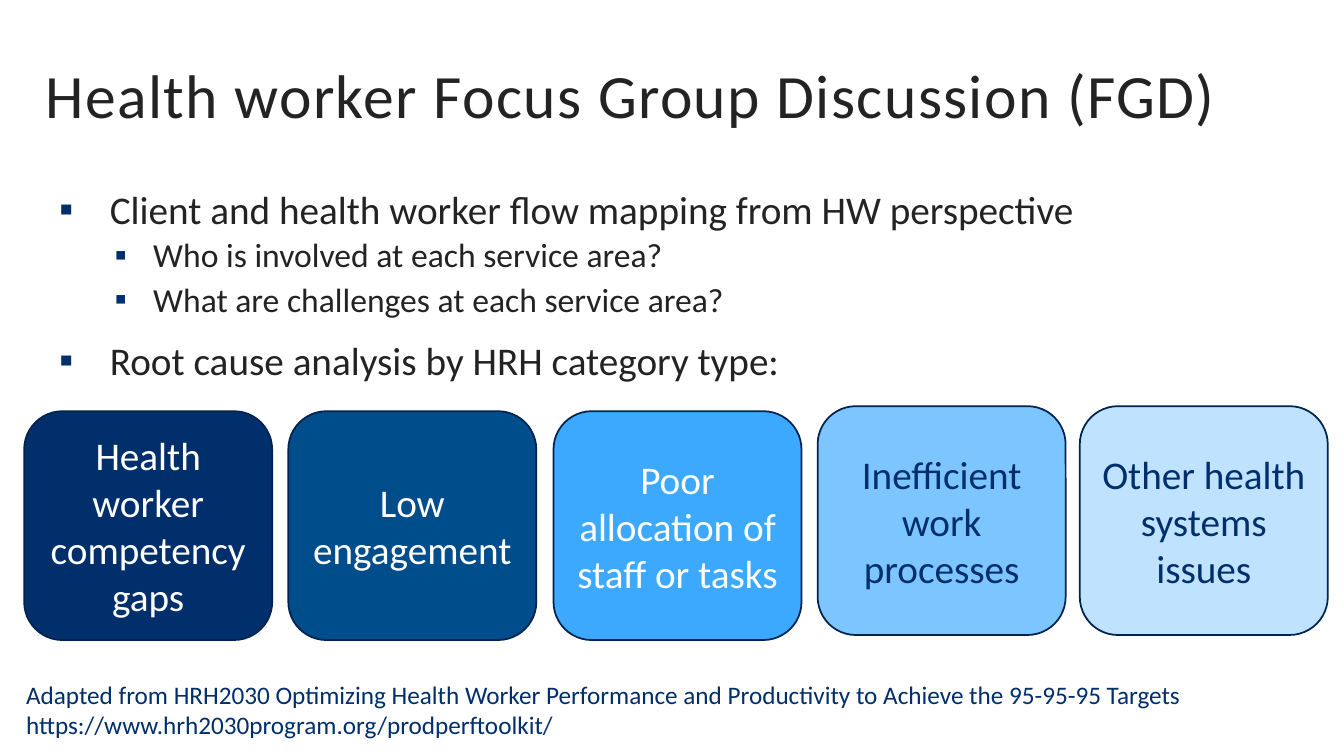
import pptx
import pptx.util
import pptx.dml.color
import pptx.enum.shapes
import pptx.enum.text
import pptx.oxml
import pptx.oxml.ns

RGB = pptx.dml.color.RGBColor
ALIGN = pptx.enum.text.PP_ALIGN
ANCHOR = pptx.enum.text.MSO_ANCHOR
INK = RGB(0x23, 0x23, 0x23)
NAVY = RGB(0x00, 0x2F, 0x6C)
EDGE = RGB(0x00, 0x23, 0x50)
BLUE = RGB(0x00, 0x4D, 0x8B)
SKY = RGB(0x3C, 0xA9, 0xFF)
LIGHT = RGB(0x7D, 0xC5, 0xFF)
PALE = RGB(0xBE, 0xE2, 0xFF)
WHITE = RGB(0xFF, 0xFF, 0xFF)

TITLE = "Health worker Focus Group Discussion (FGD)"
POINTS = [
    (0, "Client and health worker flow mapping from HW perspective"),
    (1, "Who is involved at each service area?"),
    (1, "What are challenges at each service area?"),
    (0, "Root cause analysis by HRH category type:"),
]
# level: (size, left px, hang px, points before, points after)
LEVELS = [(28, 50, 50, 12, 2), (24, 93, 38, 2, 4)]
# left px, top px, fill, text colour, text
CAUSES = [
    (24, 408, NAVY, WHITE, "Health worker competency gaps"),
    (286, 408, BLUE, WHITE, "Low engagement"),
    (549, 408, SKY, WHITE, "Poor allocation of staff or tasks"),
    (811, 403, LIGHT, NAVY, "Inefficient work processes"),
    (1071, 403, PALE, NAVY, "Other health systems issues"),
]
CAUSE_W, CAUSE_H = 246, 227
SOURCE = [
    "Adapted from HRH2030 Optimizing Health Worker Performance "
    "and Productivity to Achieve the 95-95-95 Targets",
    "https://www.hrh2030program.org/prodperftoolkit/",
]


def px(n):
    """Turn px, 100 to the inch, into EMU."""
    return pptx.util.Emu(n * 9144)


def style(para, size, color):
    font = para.font
    font.name = "Calibri"
    font.size = pptx.util.Pt(size)
    font.color.rgb = color


def bullet(para, left, hang):
    props = para._p.get_or_add_pPr()
    props.set("marL", str(px(left)))
    props.set("indent", str(-px(hang)))
    space = pptx.oxml.ns.nsdecls("a")
    for xml in (
        f'<a:buClr {space}><a:srgbClr val="{NAVY}"/></a:buClr>',
        f'<a:buFont {space} typeface="Calibri"/>',
        f'<a:buChar {space} char="▪"/>',
    ):
        props.append(pptx.oxml.parse_xml(xml))


def add_title(slide):
    title = slide.shapes.title
    title.left, title.top, title.width, title.height = map(px, (35, 29, 1262, 142))
    frame = title.text_frame
    frame.text = TITLE
    frame.word_wrap = True
    frame.vertical_anchor = ANCHOR.MIDDLE
    para = frame.paragraphs[0]
    para.alignment = ALIGN.LEFT
    para.line_spacing = 0.8
    style(para, 44, INK)
    para.runs[0]._r.get_or_add_rPr().set("spc", "100")


def add_points(slide):
    frame = slide.shapes.add_textbox(*map(px, (54, 184, 1063, 451))).text_frame
    frame.word_wrap = True
    frame.margin_left = frame.margin_right = px(5)
    frame.margin_top = frame.margin_bottom = px(5)
    frame.text = "\n".join(text for _, text in POINTS)
    for i, (para, (level, _)) in enumerate(zip(frame.paragraphs, POINTS)):
        size, left, hang, before, after = LEVELS[level]
        para.level = level
        bullet(para, left, hang)
        para.line_spacing = 0.9
        para.space_before = pptx.util.Pt(before if i else 0)
        para.space_after = pptx.util.Pt(after)
        style(para, size, INK)


def add_causes(slide):
    kind = pptx.enum.shapes.MSO_SHAPE.ROUNDED_RECTANGLE
    for left, top, fill, color, text in CAUSES:
        box = slide.shapes.add_shape(kind, *map(px, (left, top, CAUSE_W, CAUSE_H)))
        box.shadow.inherit = False
        box.fill.solid()
        box.fill.fore_color.rgb = fill
        box.line.color.rgb = EDGE
        box.line.width = pptx.util.Pt(1.25)
        frame = box.text_frame
        frame.word_wrap = True
        frame.vertical_anchor = ANCHOR.MIDDLE
        frame.text = text
        para = frame.paragraphs[0]
        para.alignment = ALIGN.CENTER
        style(para, 28, color)


def add_source(slide):
    frame = slide.shapes.add_textbox(*map(px, (16, 669, 1192, 71))).text_frame
    frame.word_wrap = False
    frame.text = "\n".join(SOURCE)
    for para in frame.paragraphs:
        style(para, 18, NAVY)


def main():
    deck = pptx.Presentation()
    deck.slide_width, deck.slide_height = px(1333), px(750)
    slide = deck.slides.add_slide(deck.slide_layouts[5])
    add_title(slide)
    add_points(slide)
    add_source(slide)
    add_causes(slide)
    deck.save("out.pptx")


if __name__ == "__main__":
    main()
